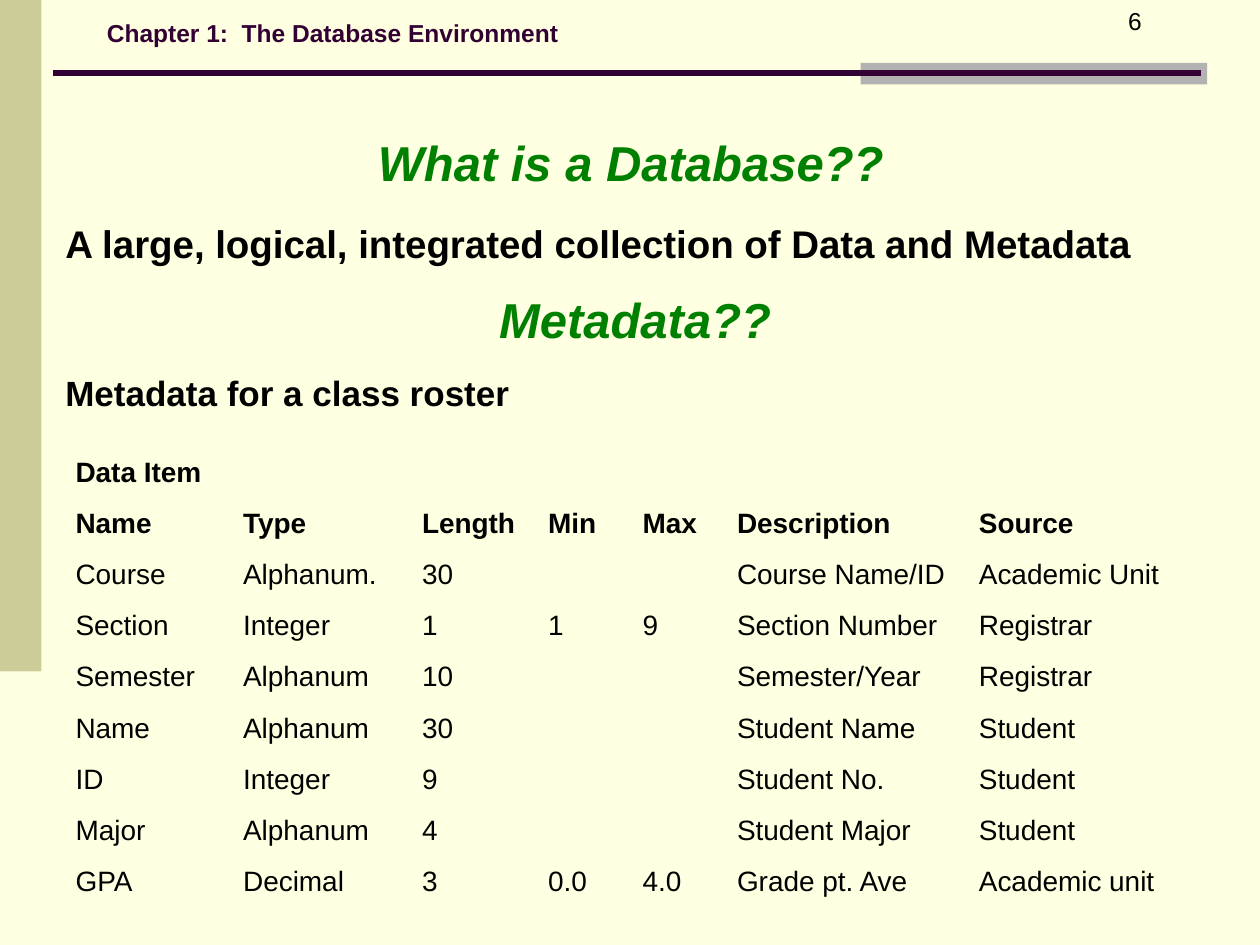
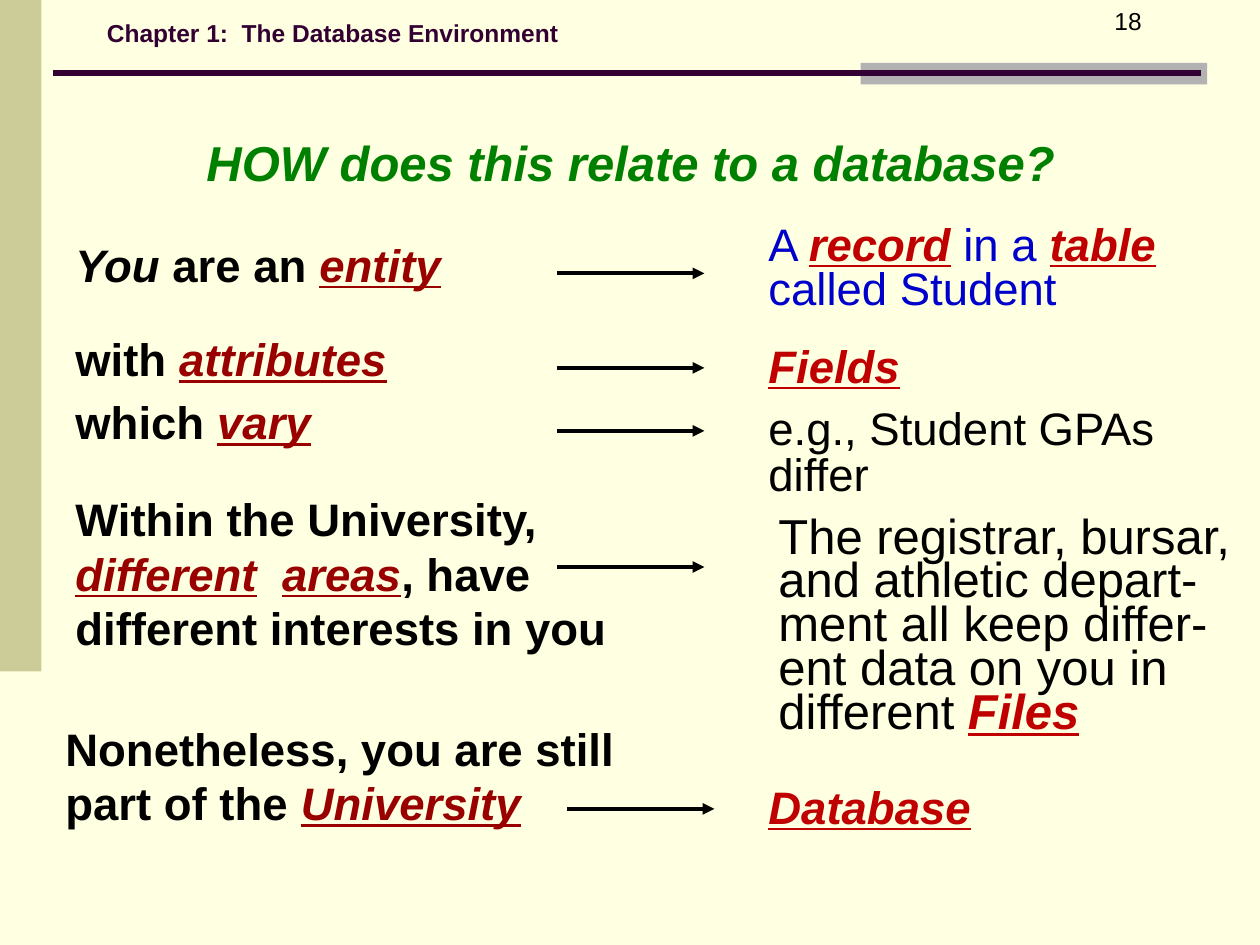
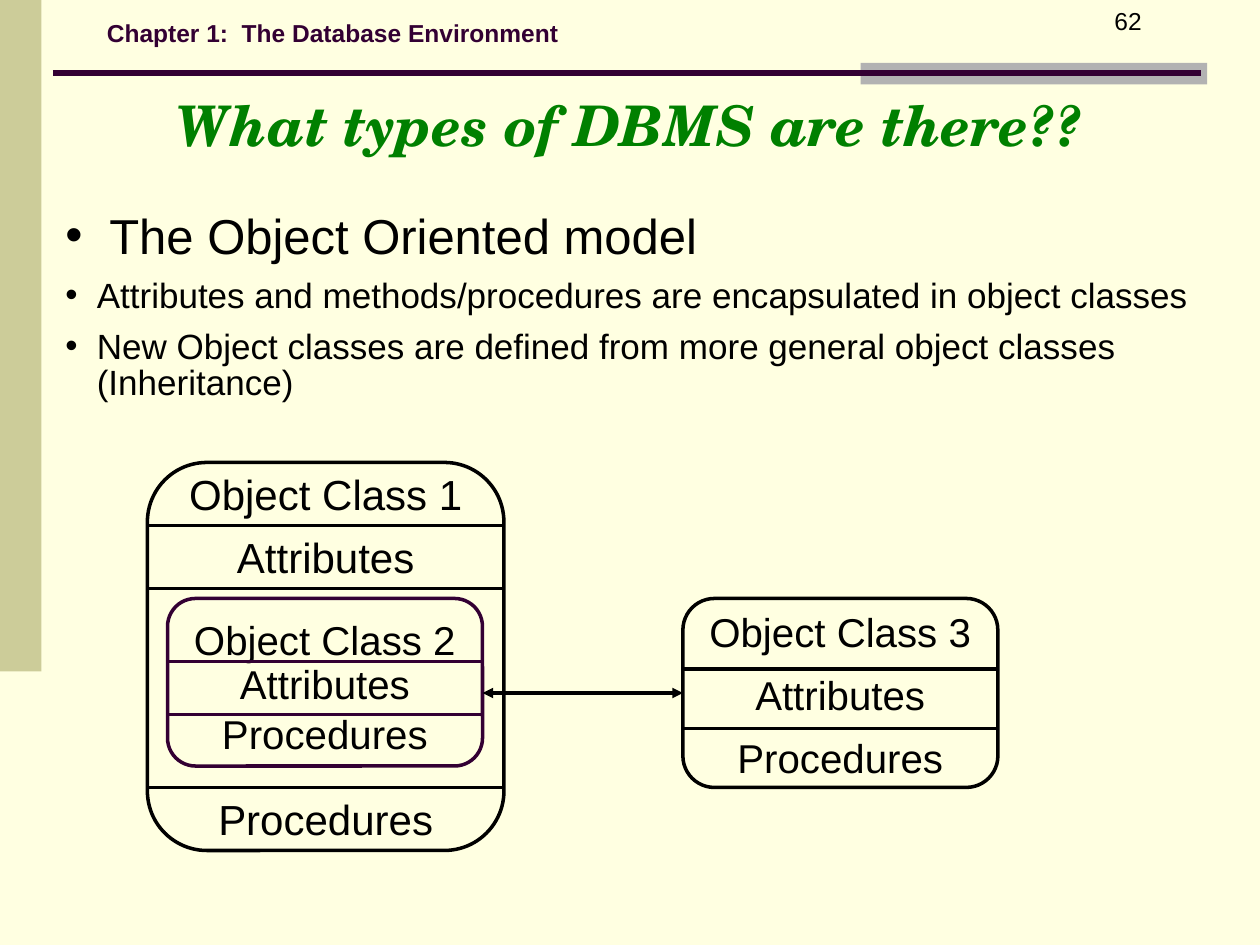
from lxml.etree import SubElement
from pptx import Presentation
from pptx.dml.color import RGBColor
from pptx.enum.shapes import MSO_CONNECTOR, MSO_SHAPE
from pptx.enum.text import MSO_ANCHOR, MSO_AUTO_SIZE, PP_ALIGN
from pptx.oxml.ns import qn
from pptx.util import Inches, Pt

COLORS = {
    "paper": "FFFFE1", "band": "CCCC99", "tab": "B2B2B2", "plum": "330033",
    "black": "000000", "title": "008000", "idea": "990000",
    "term": "C00000", "record": "0000CC",
}
CHAPTER = "Chapter 1:  The Database Environment"
TITLE = dict(size=28, color="title", bold=True, italic=True, align=PP_ALIGN.CENTER)

ROSTER_COLUMNS = [1.33, 1.42, 1, 0.75, 0.75, 1.92, 2.08]
ROSTER_HEIGHT = 3.65
ROSTER_HEADER_ROWS = 2
ROSTER = [
    ["Data Item", "", "", "", "", "", ""],
    ["Name", "Type", "Length", "Min", "Max", "Description", "Source"],
    ["Course", "Alphanum.", "30", "", "", "Course Name/ID", "Academic Unit"],
    ["Section", "Integer", "1", "1", "9", "Section Number", "Registrar"],
    ["Semester", "Alphanum", "10", "", "", "Semester/Year", "Registrar"],
    ["Name", "Alphanum", "30", "", "", "Student Name", "Student"],
    ["ID", "Integer", "9", "", "", "Student No.", "Student"],
    ["Major", "Alphanum", "4", "", "", "Student Major", "Student"],
    ["GPA", "Decimal", "3", "0.0", "4.0", "Grade pt. Ave", "Academic unit"],
]

IDEA = dict(color="idea", italic=True, underline=True)
TERM = dict(color="term", bold=True, italic=True, underline=True)
RECORD = dict(color="record")

# Everyday statements: box, runs
STATEMENTS = [
    ((0.5, 1.83, 3.58, 0.53),
     [("You", dict(italic=True)), (" are an ", {}), ("entity", IDEA)]),
    ((0.5, 2.58, 2.92, 0.53), [("with ", {}), ("attributes", IDEA)]),
    ((0.5, 3.08, 2.92, 0.53), [("which ", {}), ("vary", IDEA)]),
    ((0.5, 3.85, 4.92, 1.4),
     [("Within the University, ", {}), ("different", IDEA),
      ("  ", dict(IDEA, underline=False)), ("areas", IDEA),
      (", have different interests in you", {})]),
    ((0.42, 5.67, 4.92, 0.97),
     [("Nonetheless, you are still part of the ", {}), ("University", IDEA)]),
]
# Database counterparts: box, runs, paragraph format
COUNTERPARTS = [
    ((6, 1.75, 3.75, 0.8),
     [("A ", RECORD), ("record", TERM), (" in a ", RECORD), ("table", TERM),
      (" called Student", RECORD)], dict(spacing=Pt(25))),
    ((6, 2.63, 3.75, 0.53), [("Fields", TERM)], {}),
    ((6, 3.19, 3.58, 0.84), "e.g., Student GPAs differ", dict(spacing=0.85)),
    ((6.08, 4.08, 3.92, 1.86),
     [("The registrar, bursar, and athletic depart-ment all keep differ-ent data "
       "on you in different ", {}), ("Files", TERM)], dict(size=28, spacing=Pt(25))),
    ((6, 6.13, 3.75, 0.53), [("Database", TERM)], {}),
]
ARROW_LENGTH = 1.17
ARROW_STARTS = [(4.42, 2.17), (4.42, 2.92), (4.42, 3.42), (4.42, 4.5), (4.5, 6.42)]

# Model points: box, text, format
MODEL_POINTS = [
    ((0.42, 1.58, 5.67, 0.57), "The Object Oriented model",
     dict(size=28, bullet_indent=0.35)),
    ((0.42, 2.17, 9.25, 0.39),
     "Attributes and methods/procedures are encapsulated in object classes",
     dict(size=20, bullet_indent=0.25, spacing=0.85)),
    ((0.42, 2.58, 9.08, 0.67),
     "New Object classes are defined from more general object classes (Inheritance)",
     dict(size=20, bullet_indent=0.25, spacing=0.85)),
]
LABEL_WIDTH = 2.67
# Labels carry their top; dividers are heights on the slide
OBJECT_CLASSES = [
    dict(box=(1.33, 4.75, 2.5, 1.33), color="plum", size=23, dividers=[5.25, 5.67],
         labels=[("Object Class 2", 4.83), ("Attributes", 5.18), ("Procedures", 5.58)]),
    dict(box=(5.42, 4.75, 2.5, 1.5), color="black", size=23, dividers=[5.31, 5.78],
         labels=[("Object Class 3", 4.77), ("Attributes", 5.27), ("Procedures", 5.77)]),
    dict(box=(1.17, 3.67, 2.83, 3.08), color="black", size=24,
         dividers=[4.17, 4.67, 6.25],
         labels=[("Object Class 1", 3.67), ("Attributes", 4.17), ("Procedures", 6.25)]),
]


def rgb(name):
    return RGBColor.from_string(COLORS[name])


def inches(values):
    return [Inches(value) for value in values]


def write(frame, content, size=26, color="black", bold=False, italic=False,
          underline=False, font="Arial", align=None, spacing=None, bullet_indent=None):
    """Fill the first paragraph with a string or with (text, format) runs."""
    paragraph = frame.paragraphs[0]
    if align is not None:
        paragraph.alignment = align
    if spacing is not None:
        paragraph.line_spacing = spacing
    if bullet_indent is not None:
        properties = paragraph._p.get_or_add_pPr()
        properties.set("marL", str(Inches(bullet_indent)))
        properties.set("indent", str(-Inches(bullet_indent)))
        SubElement(properties, qn("a:buFont"), typeface="Arial")
        SubElement(properties, qn("a:buChar"), char="•")
    base = dict(color=color, bold=bold, italic=italic, underline=underline)
    for text, changes in [(content, {})] if isinstance(content, str) else content:
        look = {**base, **changes}
        run = paragraph.add_run()
        run.text = text
        run.font.name = font
        run.font.size = Pt(size)
        run.font.color.rgb = rgb(look["color"])
        run.font.bold = look["bold"]
        run.font.italic = look["italic"]
        run.font.underline = look["underline"]


def add_text(shapes, box, content, anchor=MSO_ANCHOR.TOP, grow=True, **look):
    frame = shapes.add_textbox(*inches(box)).text_frame
    frame.word_wrap = True
    frame.vertical_anchor = anchor
    frame.auto_size = MSO_AUTO_SIZE.SHAPE_TO_FIT_TEXT if grow else MSO_AUTO_SIZE.NONE
    write(frame, content, **look)


def add_box(shapes, box, kind=MSO_SHAPE.RECTANGLE, fill=None, outline=None):
    shape = shapes.add_shape(kind, *inches(box))
    shape.shadow.inherit = False
    if fill:
        shape.fill.solid()
        shape.fill.fore_color.rgb = rgb(fill)
    else:
        shape.fill.background()
    if outline:
        shape.line.color.rgb = rgb(outline)
        shape.line.width = Pt(2)
    else:
        shape.line.fill.background()
    return shape


def add_line(shapes, start, end, color="black", width=2, arrows=()):
    line = shapes.add_connector(MSO_CONNECTOR.STRAIGHT, *inches(start + end))
    line.line.color.rgb = rgb(color)
    line.line.width = Pt(width)
    for arrow in arrows:
        SubElement(line.line._get_or_add_ln(), qn(f"a:{arrow}"), type="triangle")
    SubElement(line._element.spPr, qn("a:effectLst"))
    return line


def add_page(deck, number):
    """Add a slide with the side band, the chapter line and the page number."""
    shapes = deck.slides.add_slide(deck.slide_layouts[6]).shapes
    add_box(shapes, (0, 0, 0.33, 5.33), fill="band")
    add_box(shapes, (6.83, 0.5, 2.75, 0.17), fill="tab")
    add_line(shapes, (0.42, 0.58), (9.53, 0.58), "plum", 3.5)
    add_text(shapes, (0.75, 0.08, 8.5, 0.36), CHAPTER, size=14, color="plum",
             bold=True, anchor=MSO_ANCHOR.MIDDLE, grow=False)
    add_text(shapes, (7.08, 0, 2.08, 0.5), str(number), size=14,
             align=PP_ALIGN.RIGHT, grow=False)
    return shapes


def set_borders(cell, bottom):
    properties = cell._tc.get_or_add_tcPr()
    for side, width in dict(lnL=1, lnR=1, lnT=1, lnB=bottom).items():
        border = SubElement(properties, qn(f"a:{side}"), w=str(Pt(width)))
        fill = SubElement(border, qn("a:solidFill"))
        SubElement(fill, qn("a:srgbClr"), val=COLORS["paper"])


def add_roster(shapes):
    table = shapes.add_table(
        len(ROSTER), len(ROSTER_COLUMNS),
        *inches((0.5, 3.58, sum(ROSTER_COLUMNS), ROSTER_HEIGHT))).table
    table.first_row = table.horz_banding = False
    for column, width in zip(table.columns, ROSTER_COLUMNS):
        column.width = Inches(width)
    for r, items in enumerate(ROSTER):
        table.rows[r].height = Inches(ROSTER_HEIGHT / len(ROSTER))
        for c, item in enumerate(items):
            cell = table.cell(r, c)
            set_borders(cell, bottom=3 if r == 0 else 1)
            cell.fill.background()
            if item:
                write(cell.text_frame, item, size=16, bold=r < ROSTER_HEADER_ROWS)


def add_object_class(shapes, box, color, size, dividers, labels):
    group = shapes.add_group_shape().shapes
    left, _, width, _ = box
    outline = add_box(group, box, MSO_SHAPE.ROUNDED_RECTANGLE, outline=color)
    outline.adjustments[0] = 0.167
    label_left = left + (width - LABEL_WIDTH) / 2
    for label, top in labels:
        add_text(group, (label_left, top, LABEL_WIDTH, 0.48), label, size=size,
                 align=PP_ALIGN.CENTER)
    for y in dividers:
        add_line(group, (left, y), (left + width, y), color)
    return outline


def build_metadata(deck):
    shapes = add_page(deck, 6)
    add_text(shapes, (0.42, 1, 9.17, 0.57), "What is a Database??", **TITLE)
    add_text(shapes, (0.42, 1.7, 9.33, 0.47),
             "A large, logical, integrated collection of Data and Metadata",
             size=22, bold=True)
    add_text(shapes, (0.08, 2.25, 9.92, 0.57), "Metadata??", **TITLE)
    add_text(shapes, (0.42, 2.9, 9.33, 0.44), "Metadata for a class roster",
             size=20, bold=True)
    add_roster(shapes)


def build_relation(deck):
    shapes = add_page(deck, 18)
    add_text(shapes, (0.42, 1, 9.17, 0.57), "HOW does this relate to a database?",
             **TITLE)
    for statement, (x, y), counterpart in zip(STATEMENTS, ARROW_STARTS, COUNTERPARTS):
        add_text(shapes, *statement, bold=True)
        add_line(shapes, (x, y), (x + ARROW_LENGTH, y), width=2.25, arrows=["tailEnd"])
        box, runs, look = counterpart
        add_text(shapes, box, runs, **look)


def build_object_model(deck):
    shapes = add_page(deck, 62)
    add_text(shapes, (0, 0.67, 10, 0.64), "What types of DBMS are there??",
             **{**TITLE, "size": 32, "font": "TeX Gyre Schola"})
    for box, point, look in MODEL_POINTS:
        add_text(shapes, box, point, **look)
    class_2, class_3, class_1 = OBJECT_CLASSES
    add_object_class(shapes, **class_2)
    class_3_outline = add_object_class(shapes, **class_3)
    link = add_line(shapes, (3.83, 5.5), (5.42, 5.5), arrows=["headEnd", "tailEnd"])
    link.end_connect(class_3_outline, 1)
    add_object_class(shapes, **class_1)


def main():
    deck = Presentation()
    deck.slide_width, deck.slide_height = Inches(10), Inches(7.5)
    background = deck.slide_master.background.fill
    background.solid()
    background.fore_color.rgb = rgb("paper")
    build_metadata(deck)
    build_relation(deck)
    build_object_model(deck)
    deck.save("out.pptx")


if __name__ == "__main__":
    main()
